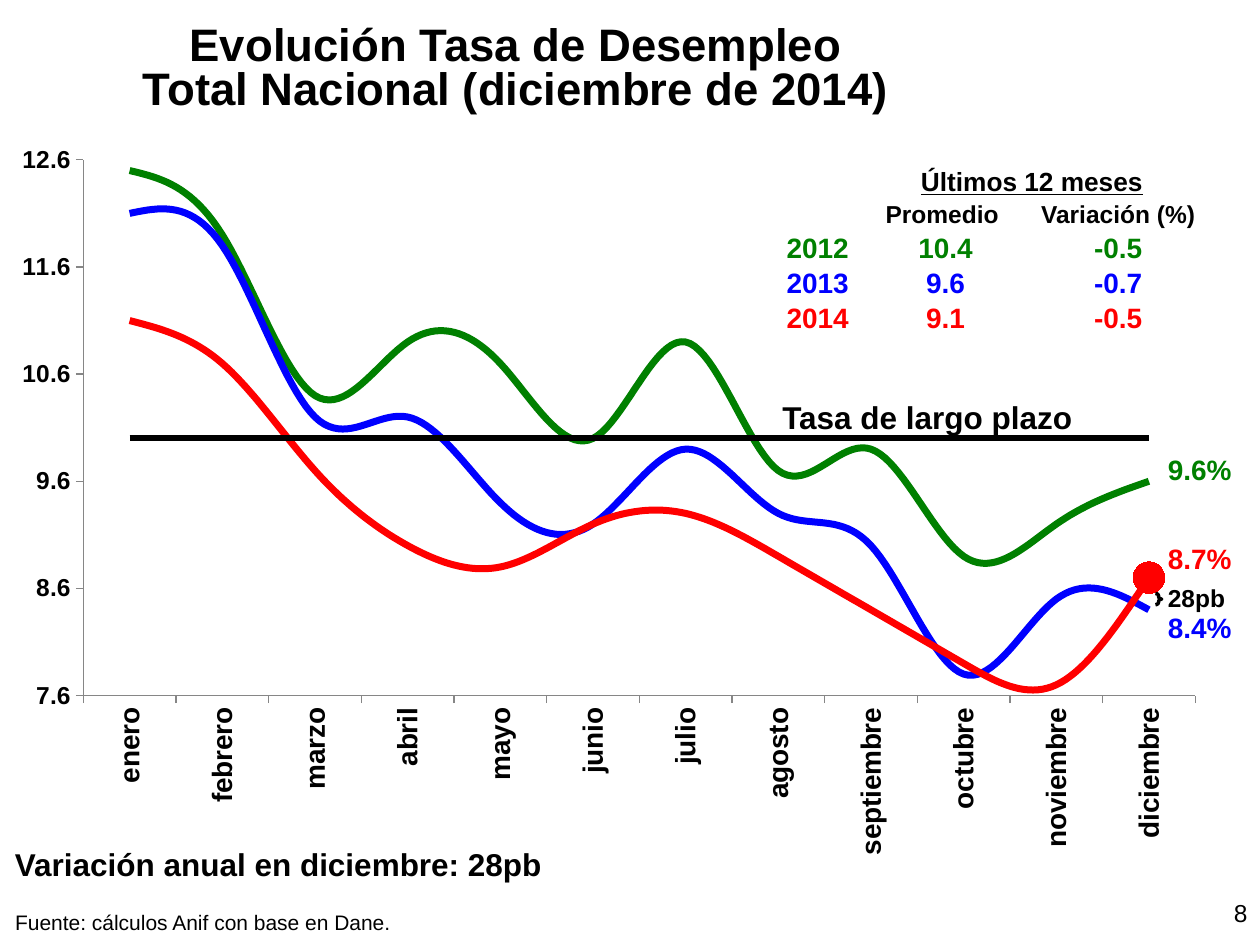
from dataclasses import dataclass

from lxml import etree
from pptx import Presentation
from pptx.chart.data import CategoryChartData
from pptx.dml.color import RGBColor
from pptx.enum import chart as ch, shapes, text
from pptx.oxml import ns
from pptx.util import Inches, Pt


@dataclass(frozen=True)
class Theme:
    font: str = "Arial"
    black: RGBColor = RGBColor(0, 0, 0)
    white: RGBColor = RGBColor(255, 255, 255)
    gray: RGBColor = RGBColor(0x86, 0x86, 0x86)
    green: RGBColor = RGBColor(0, 0x80, 0)
    blue: RGBColor = RGBColor(0, 0, 255)
    red: RGBColor = RGBColor(255, 0, 0)
    title: int = 26
    heading: int = 18
    label: int = 16
    table_head: int = 15
    small: int = 14
    source: int = 12


T = Theme()
LEFT, CENTER, RIGHT = text.PP_ALIGN.LEFT, text.PP_ALIGN.CENTER, text.PP_ALIGN.RIGHT

MONTHS = ["enero", "febrero", "marzo", "abril", "mayo", "junio", "julio", "agosto",
          "septiembre", "octubre", "noviembre", "diciembre"]
RATES = [
    ("2012", T.green, [12.5, 11.9, 10.4, 10.9, 10.7, 10, 10.9, 9.7, 9.9, 8.9, 9.2, 9.6]),
    ("2013", T.blue, [12.1, 11.8, 10.2, 10.2, 9.4, 9.2, 9.9, 9.3, 9, 7.8, 8.5, 8.4]),
    ("2014", T.red, [11.1, 10.7, 9.7, 9, 8.8, 9.2, 9.3, 8.9, 8.4, 7.9, 7.7, 8.7]),
]
LONG_TERM = ("Tasa de largo plazo", T.black, [10] * len(MONTHS))
SUMMARY = [("2012", "10.4", "-0.5"), ("2013", "9.6", "-0.7"), ("2014", "9.1", "-0.5")]


def style_font(font, size, color=T.black, bold=True):
    font.name, font.size, font.bold = T.font, Pt(size), bold
    font.color.rgb = color


def add_run(p, content, size, color=T.black, bold=True):
    r = p.add_run()
    r.text = content
    style_font(r.font, size, color, bold)
    return r


def set_margins(target, left, top, right, bottom):
    target.margin_left, target.margin_top = Inches(left), Inches(top)
    target.margin_right, target.margin_bottom = Inches(right), Inches(bottom)


def add_title(s, lines):
    sp = s.shapes.title
    sp.left, sp.top, sp.width, sp.height = (Inches(v) for v in (0.54, 0.21, 7.11, 0.69))
    tf = sp.text_frame
    tf.auto_size = text.MSO_AUTO_SIZE.NONE
    tf.vertical_anchor = text.MSO_ANCHOR.TOP
    set_margins(tf, 0, 0, 0, 0)
    for i, line in enumerate(lines):
        p = tf.add_paragraph() if i else tf.paragraphs[0]
        p.alignment, p.line_spacing = CENTER, 0.8
        p.space_before = Pt(0)
        add_run(p, line, T.title)


def add_text(s, content, box, size, color=T.black, bold=True, align=LEFT, wrap=True, inset=True):
    tf = s.shapes.add_textbox(*(Inches(v) for v in box)).text_frame
    tf.word_wrap = wrap
    if not inset:
        set_margins(tf, 0, 0, 0, 0)
    p = tf.paragraphs[0]
    p.alignment = align
    add_run(p, content, size, color, bold)


def set_plot_area(chart, x, y, w, h):
    """Place the inner plot area, in fractions of the chart."""
    plot_area = chart.plots[0]._element.getparent()
    for old in plot_area.findall(ns.qn("c:layout")):
        plot_area.remove(old)
    layout = etree.Element(ns.qn("c:layout"))
    manual = etree.SubElement(layout, ns.qn("c:manualLayout"))
    values = {"layoutTarget": "inner", "xMode": "edge", "yMode": "edge",
              "x": x, "y": y, "w": w, "h": h}
    for tag, value in values.items():
        etree.SubElement(manual, ns.qn(f"c:{tag}")).set("val", str(value))
    plot_area.insert(0, layout)


def style_axis(axis, size):
    axis.has_major_gridlines = False
    axis.major_tick_mark = ch.XL_TICK_MARK.OUTSIDE
    axis.minor_tick_mark = ch.XL_TICK_MARK.NONE
    axis.format.line.color.rgb = T.gray
    axis.format.line.width = Pt(0.75)
    style_font(axis.tick_labels.font, size)


def add_rate_chart(s):
    data = CategoryChartData(number_format="0.0")
    data.categories = MONTHS
    all_series = RATES + [LONG_TERM]
    for name, _, values in all_series:
        data.add_series(name, values)
    box = (Inches(v) for v in (0.02, 1.09, 9.71, 5.77))
    chart = s.shapes.add_chart(ch.XL_CHART_TYPE.LINE, *box, data).chart
    chart.has_legend = chart.has_title = False
    style_font(chart.font, 10, bold=False)
    chart.plots[0].vary_by_categories = False
    set_plot_area(chart, 0.066, 0.031, 0.909, 0.737)

    style_axis(chart.category_axis, T.label)
    body = chart.category_axis._element.find(ns.qn("c:txPr")).find(ns.qn("a:bodyPr"))
    body.set("rot", "-5400000")
    body.set("vert", "horz")
    axis = chart.value_axis
    style_axis(axis, T.small)
    axis.minimum_scale, axis.maximum_scale, axis.major_unit = 7.6, 12.6, 1
    axis.tick_labels.number_format = "#,##0.0"
    axis.tick_labels.number_format_is_linked = False

    for series, (name, color, _) in zip(chart.series, all_series):
        is_rate = name != LONG_TERM[0]
        series.smooth = is_rate
        series.format.line.color.rgb = color
        series.format.line.width = Pt(4 if is_rate else 3.5)
        series.marker.style = ch.XL_MARKER_STYLE.NONE

    latest = chart.series[2].points[len(MONTHS) - 1]
    latest.format.line.color.rgb = T.red
    latest.format.line.width = Pt(4)
    latest.marker.style = ch.XL_MARKER_STYLE.CIRCLE
    latest.marker.size = 18
    latest.marker.format.fill.solid()
    latest.marker.format.fill.fore_color.rgb = T.red
    latest.marker.format.line.color.rgb = T.red


def fill_cell(cell, content, size, color=T.black):
    cell.fill.solid()
    cell.fill.fore_color.rgb = T.white
    cell.vertical_anchor = text.MSO_ANCHOR.MIDDLE
    set_margins(cell, 0.01, 0.01, 0.01, 0)
    p = cell.text_frame.paragraphs[0]
    p.alignment = CENTER
    if content:
        return add_run(p, content, size, color)
    p._p.get_or_add_endParaRPr().set("sz", str(size * 100))


def add_summary_table(s):
    box = (Inches(v) for v in (6.16, 1.31, 3.4, 1.36))
    table = s.shapes.add_table(5, 3, *box).table
    table.first_row = table.horz_banding = False
    for column, width in zip(table.columns, (0.66, 1.37, 1.37)):
        column.width = Inches(width)
    for row, height in zip(table.rows, (0.27, 0.25, 0.28, 0.28, 0.28)):
        row.height = Inches(height)

    table.cell(0, 1).merge(table.cell(0, 2))
    fill_cell(table.cell(0, 0), "", T.small)
    fill_cell(table.cell(0, 1), "Últimos 12 meses", T.table_head).font.underline = True
    for c, heading in enumerate(("", "Promedio ", "Variación (%)")):
        fill_cell(table.cell(1, c), heading, T.small)
    for r, (row, (_, color, _)) in enumerate(zip(SUMMARY, RATES), start=2):
        for c, value in enumerate(row):
            fill_cell(table.cell(r, c), value, T.label, color)


def add_brace(s):
    box = (Inches(v) for v in (9.17, 4.71, 0.05, 0.09))
    sp = s.shapes.add_shape(shapes.MSO_SHAPE.RIGHT_BRACE, *box)
    sp.adjustments[0], sp.adjustments[1] = 0.41, 0.5
    sp.shadow.inherit = False
    sp.fill.background()
    sp.line.color.rgb = T.black
    sp.line.width = Pt(2)


def main():
    prs = Presentation()
    prs.slide_width, prs.slide_height = Inches(10), Inches(7.5)
    s = prs.slides.add_slide(prs.slide_layouts[5])

    add_title(s, ["Evolución Tasa de Desempleo", "Total Nacional (diciembre de 2014)"])
    add_rate_chart(s)
    add_summary_table(s)
    add_text(s, "Tasa de largo plazo", (5.63, 3.11, 3.46, 0.4), T.heading, align=CENTER)
    for content, top, color in (("9.6%", 3.54, T.green), ("8.7%", 4.25, T.red),
                                ("8.4%", 4.8, T.blue)):
        add_text(s, content, (9.17, top, 0.8, 0.37), T.label, color)
    add_text(s, "28pb", (9.17, 4.58, 0.8, 0.34), T.small)
    add_brace(s)
    add_text(s, "Variación anual en diciembre: 28pb", (0.02, 6.66, 4.42, 0.4),
             T.heading, wrap=False)
    add_text(s, "Fuente: cálculos Anif con base en Dane.", (0.12, 7.22, 3, 0.2),
             T.source, bold=False, wrap=False, inset=False)
    add_text(s, "8", (9.33, 7.08, 0.67, 0.42), T.small, bold=False, align=RIGHT)
    prs.save("out.pptx")


if __name__ == "__main__":
    main()
